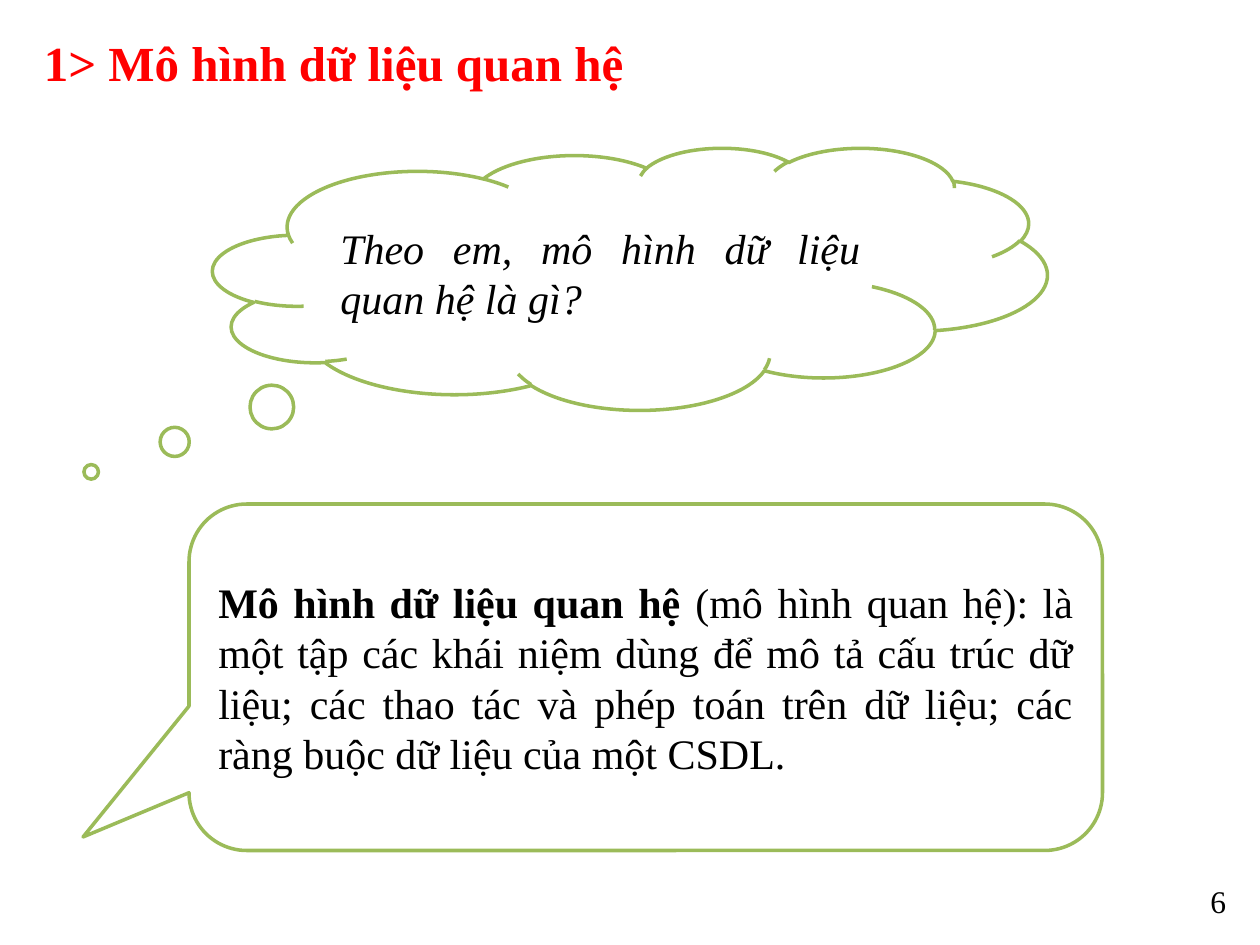
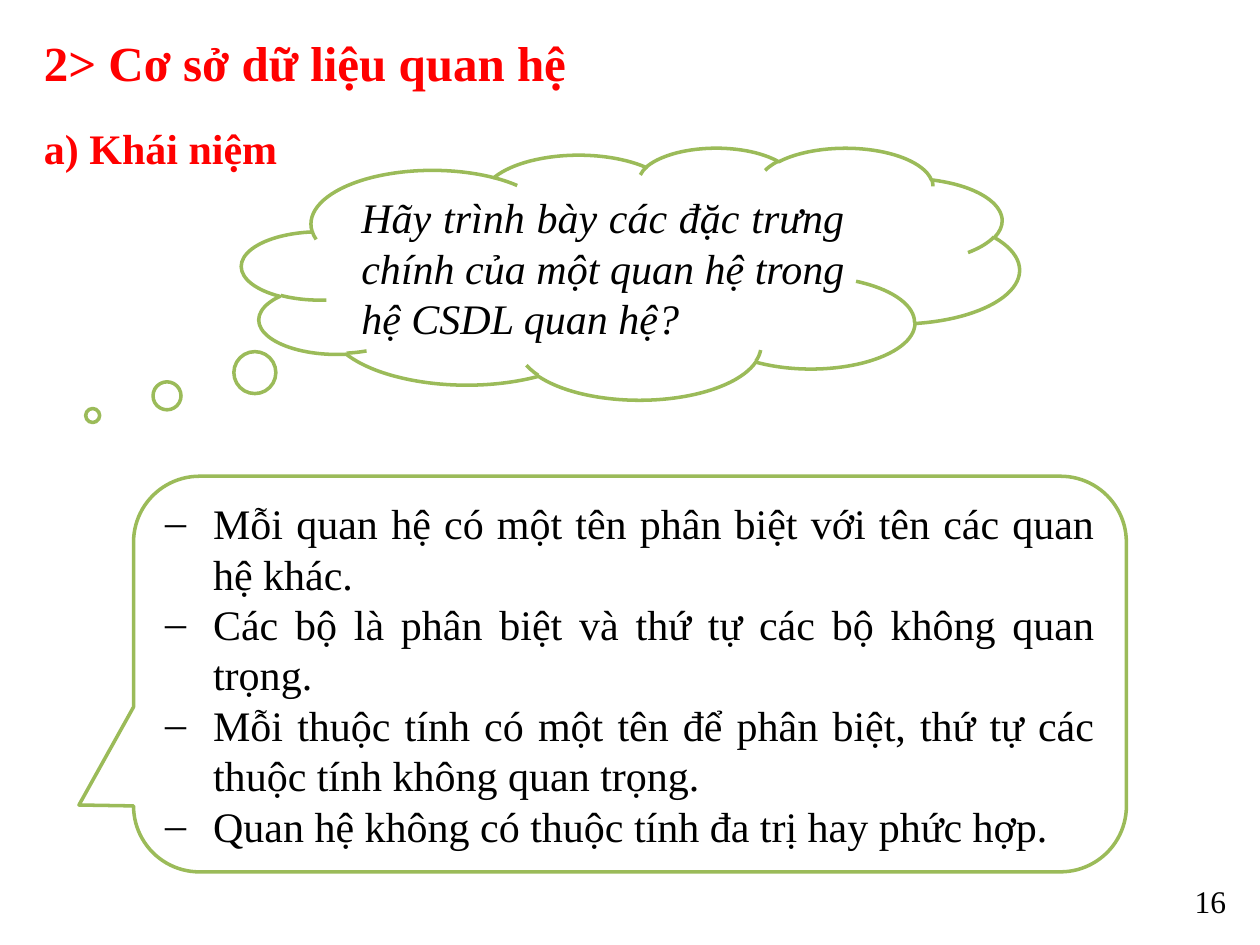
from lxml.etree import SubElement
from pptx import Presentation
from pptx.dml.color import RGBColor
from pptx.enum.shapes import MSO_SHAPE as Shape
from pptx.enum.text import MSO_ANCHOR as Anchor, PP_ALIGN as Align
from pptx.oxml.ns import qn
from pptx.util import Inches, Pt

COLORS = {"heading": "FF0000", "text": "000000", "fill": "FFFFFF", "outline": "9BBB59"}
FONT = "Times New Roman"
STYLES = {
    "title": {"size": Pt(28), "bold": True, "color": "heading"},
    "subtitle": {"size": Pt(24), "bold": True, "color": "heading"},
    "question": {"size": Pt(24), "italic": True, "color": "text"},
    "answer": {"size": Pt(24), "color": "text"},
    "term": {"size": Pt(24), "bold": True, "color": "text"},
    "number": {"size": Pt(18), "color": "text"},
}
TITLE_BOX = (0.25, 0.12, 8.67, 0.75)
SUBTITLE_BOX = (0.25, 0.92, 3.58, 0.5)
NUMBER_BOX = (7.5, 6.95, 2.33, 0.4)
BULLET = "‒"
BULLET_INDENT = Inches(0.38)

SLIDES = [
    {
        "title": "1> Mô hình dữ liệu quan hệ",
        "number": "6",
        "question": "Theo em, mô hình dữ liệu quan hệ là gì?",
        "cloud": {"box": (1.69, 1.17, 6.62, 2.08), "tail": (-0.646, 0.738)},
        "answer": [
            [
                ("Mô hình dữ liệu quan hệ ", "term"),
                ("(mô hình quan hệ): là một tập các khái niệm dùng để mô tả cấu trúc "
                 "dữ liệu; các thao tác và phép toán trên dữ liệu; các ràng buộc dữ liệu "
                 "của một CSDL.", "answer"),
            ],
        ],
        "bubble": {"box": (1.5, 4, 7.25, 2.75), "tail": (-0.616, 0.461)},
    },
    {
        "title": "2> Cơ sở dữ liệu quan hệ",
        "subtitle": "a) Khái niệm",
        "number": "16",
        "question": "Hãy trình bày các đặc trưng chính của một quan hệ trong hệ CSDL quan hệ?",
        "cloud": {"box": (1.92, 1.17, 6.17, 2), "tail": (-0.692, 0.564)},
        "answer": [
            [("Mỗi quan hệ có một tên phân biệt với tên các quan hệ khác.", "answer")],
            [("Các bộ là phân biệt và thứ tự các bộ không quan trọng.", "answer")],
            [("Mỗi thuộc tính có một tên để phân biệt, thứ tự các thuộc tính "
              "không quan trọng.", "answer")],
            [("Quan hệ không có thuộc tính đa trị hay phức hợp.", "answer")],
        ],
        "bubble": {"box": (1.06, 3.78, 7.88, 3.14), "tail": (-0.555, 0.331)},
    },
]


def color(name):
    return RGBColor.from_string(COLORS[name])


def add_bullet(paragraph):
    properties = paragraph._p.get_or_add_pPr()
    properties.set("marL", str(BULLET_INDENT))
    properties.set("indent", str(-BULLET_INDENT))
    SubElement(properties, qn("a:buFont"), typeface=FONT)
    SubElement(properties, qn("a:buChar"), char=BULLET)


def write(shape, paragraphs, align, anchor, bulleted=False):
    frame = shape.text_frame
    frame.word_wrap = True
    frame.vertical_anchor = anchor
    for index, runs in enumerate(paragraphs):
        paragraph = frame.add_paragraph() if index else frame.paragraphs[0]
        paragraph.alignment = align
        if bulleted:
            add_bullet(paragraph)
        for text, style in runs:
            run = paragraph.add_run()
            run.text = text
            run.font.name = FONT
            for key, value in STYLES[style].items():
                if key == "color":
                    run.font.color.rgb = color(value)
                else:
                    setattr(run.font, key, value)


def add_text(slide, box, text, style, align, anchor=Anchor.TOP):
    shape = slide.shapes.add_textbox(*map(Inches, box))
    write(shape, [[(text, style)]], align, anchor)


def add_callout(slide, kind, callout, paragraphs):
    shape = slide.shapes.add_shape(kind, *map(Inches, callout["box"]))
    for index, value in enumerate(callout["tail"]):
        shape.adjustments[index] = value
    shape.shadow.inherit = False
    shape.fill.solid()
    shape.fill.fore_color.rgb = color("fill")
    shape.line.color.rgb = color("outline")
    shape.line.width = Pt(2)
    write(shape, paragraphs, Align.JUSTIFY, Anchor.MIDDLE, len(paragraphs) > 1)


def build_slide(presentation, content):
    slide = presentation.slides.add_slide(presentation.slide_layouts[6])
    add_text(slide, TITLE_BOX, content["title"], "title", Align.JUSTIFY, Anchor.MIDDLE)
    add_text(slide, NUMBER_BOX, content["number"], "number", Align.RIGHT)
    add_callout(slide, Shape.CLOUD_CALLOUT, content["cloud"],
                [[(content["question"], "question")]])
    add_callout(slide, Shape.ROUNDED_RECTANGULAR_CALLOUT, content["bubble"], content["answer"])
    if "subtitle" in content:
        add_text(slide, SUBTITLE_BOX, content["subtitle"], "subtitle", Align.LEFT)


def main():
    presentation = Presentation()
    presentation.slide_width = Inches(10)
    presentation.slide_height = Inches(7.5)
    for content in SLIDES:
        build_slide(presentation, content)
    presentation.save("out.pptx")


if __name__ == "__main__":
    main()
